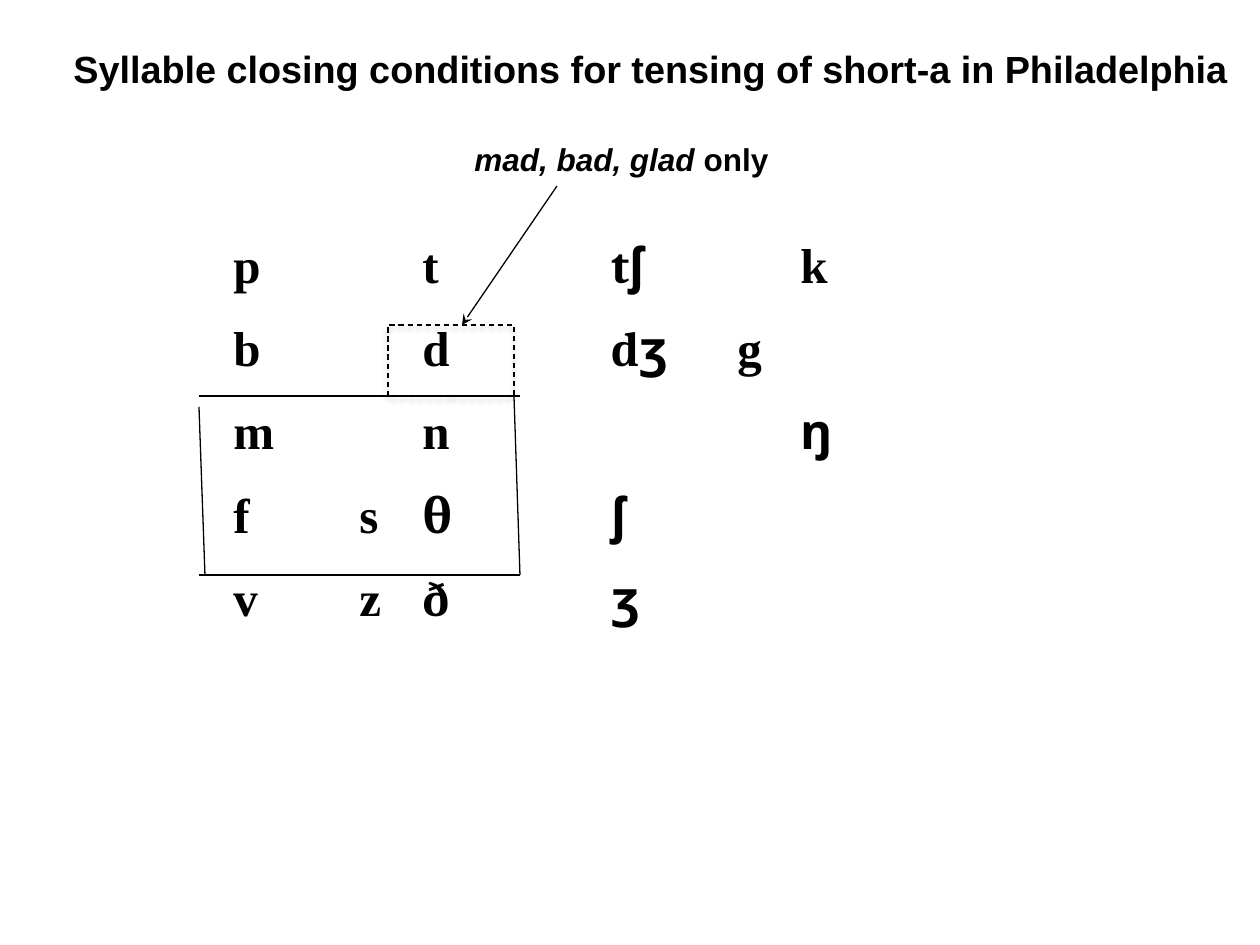
from typing import NamedTuple

from lxml.etree import SubElement
from pptx import Presentation
from pptx.dml.color import RGBColor
from pptx.enum.dml import MSO_LINE
from pptx.enum.shapes import MSO_CONNECTOR, MSO_SHAPE
from pptx.enum.text import MSO_ANCHOR as Anchor, MSO_AUTO_SIZE as AutoSize, PP_ALIGN as Align
from pptx.oxml.ns import qn
from pptx.util import Emu, Pt

BLACK = RGBColor(0x00, 0x00, 0x00)
PX_PER_INCH = 126
TAB_STEP, TAB_COUNT = 63, 12
TIMES, CAMBRIA, NOTO, ARIAL = "Times New Roman", "Cambria", "Noto Sans", "Arial"


class Box(NamedTuple):
    left: int
    top: int
    width: int
    height: int


class Stroke(NamedTuple):
    x1: int
    y1: int
    x2: int
    y2: int
    arrow: bool = False


class Piece(NamedTuple):
    text: str
    font: str
    italic: bool = False


def px(length: int) -> Emu:
    return Emu(round(length * 914400 / PX_PER_INCH))


def add_pieces(paragraph, pieces: list[Piece], size: float) -> None:
    for piece in pieces:
        run = paragraph.add_run()
        run.text = piece.text
        style = {"name": piece.font, "size": Pt(size), "bold": True, "italic": piece.italic}
        for key, value in style.items():
            setattr(run.font, key, value)
        run.font.color.rgb = BLACK


def add_text(slide, box: Box, rows: list[list[Piece]], size: float, tabbed: bool = False) -> None:
    frame = slide.shapes.add_textbox(*map(px, box)).text_frame
    frame.word_wrap = True
    frame.auto_size = AutoSize.SHAPE_TO_FIT_TEXT
    for index, pieces in enumerate(rows):
        paragraph = frame.paragraphs[0] if index == 0 else frame.add_paragraph()
        add_pieces(paragraph, pieces, size)
        properties = paragraph._p.get_or_add_pPr()
        # Space before, relative to the line
        before = SubElement(properties, qn("a:spcBef"))
        SubElement(before, qn("a:spcPct"), val="50000")
        if tabbed:
            stops = SubElement(properties, qn("a:tabLst"))
            for stop in range(1, TAB_COUNT + 1):
                SubElement(stops, qn("a:tab"), pos=str(px(stop * TAB_STEP)), algn="l")


def add_stroke(slide, stroke: Stroke) -> None:
    ends = map(px, stroke[:4])
    connector = slide.shapes.add_connector(MSO_CONNECTOR.STRAIGHT, *ends)
    connector.line.color.rgb = BLACK
    connector.line.width = Pt(0.75)
    if stroke.arrow:
        SubElement(connector.line._get_or_add_ln(), qn("a:tailEnd"), type="stealth")
    SubElement(connector._element.spPr, qn("a:effectLst"))


def add_dashed_box(slide, box: Box) -> None:
    frame = slide.shapes.add_shape(MSO_SHAPE.RECTANGLE, *map(px, box))
    frame.fill.background()
    for key, value in {"width": Pt(0.75), "dash_style": MSO_LINE.DASH}.items():
        setattr(frame.line, key, value)
    frame.line.color.rgb = BLACK
    # Soft shadow straight below
    frame.shadow.inherit = False
    effects = frame._element.spPr.find(qn("a:effectLst"))
    shadow = SubElement(effects, qn("a:outerShdw"), blurRad=str(Pt(3.1)), dist=str(Pt(1.8)),
                        dir="5400000", rotWithShape="0")
    colour = SubElement(shadow, qn("a:srgbClr"), val=str(BLACK))
    SubElement(colour, qn("a:alpha"), val="35000")


def add_title(slide, box: Box, text: str) -> None:
    title = slide.shapes.title
    for key, value in box._asdict().items():
        setattr(title, key, px(value))
    frame = title.text_frame
    layout = {"vertical_anchor": Anchor.MIDDLE, "auto_size": AutoSize.NONE, "word_wrap": True}
    for key, value in layout.items():
        setattr(frame, key, value)
    frame.paragraphs[0].alignment = Align.CENTER
    add_pieces(frame.paragraphs[0], [Piece(text, ARIAL)], 21.6)


CONSONANTS = [
    [Piece("p\t\t\tt\t\t\t", TIMES), Piece("t", CAMBRIA), Piece("ʃ\t\t\t", NOTO), Piece("k", TIMES)],
    [Piece("b\t\t\td\t\t\t", TIMES), Piece("d", CAMBRIA), Piece("ʒ\t\t", NOTO), Piece("g", TIMES)],
    [Piece("m\t\t\tn\t\t\t\t\t\t", TIMES), Piece("ŋ", NOTO)],
    [Piece("f\t\ts\t", TIMES), Piece("θ\t\t\t", CAMBRIA), Piece("ʃ", NOTO)],
    [Piece("v\t\tz\t", TIMES), Piece("ð\t\t\t", CAMBRIA), Piece("ʒ", NOTO)],
]
TENSING_REGION = [
    Stroke(199, 396, 520, 396),
    Stroke(199, 407, 205, 575),
    Stroke(199, 575, 520, 575),
    Stroke(514, 396, 520, 575),
]
EXCEPTION = [Piece("mad, bad, glad", ARIAL, italic=True), Piece(" only", ARIAL)]


def main() -> None:
    deck = Presentation()
    deck.slide_width, deck.slide_height = px(1260), px(945)
    slide = deck.slides.add_slide(deck.slide_layouts[5])

    # Consonant chart and the region that triggers tensing
    add_text(slide, Box(221, 228, 955, 518), CONSONANTS, 28, tabbed=True)
    for edge in TENSING_REGION:
        add_stroke(slide, edge)

    # Exception words pointing at d
    add_text(slide, Box(462, 134, 346, 50), [EXCEPTION], 18)
    add_stroke(slide, Stroke(557, 186, 462, 325, arrow=True))

    add_title(slide, Box(21, 32, 1260, 73),
              "Syllable closing conditions for tensing of short-a in Philadelphia")
    add_dashed_box(slide, Box(388, 325, 126, 71))
    deck.save("out.pptx")


if __name__ == "__main__":
    main()
